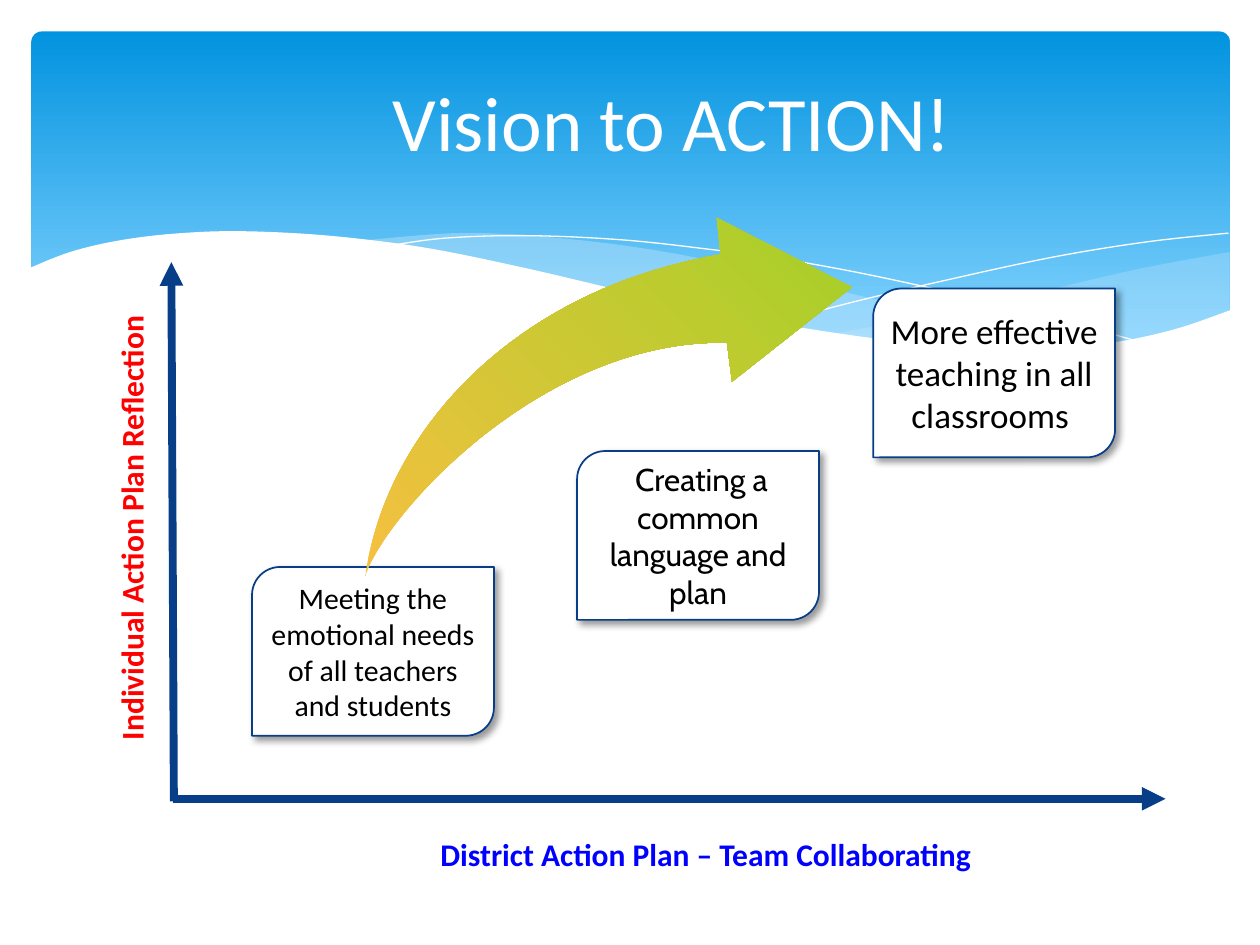
from lxml import etree
from pptx import Presentation
from pptx import util as u
from pptx.dml import color
from pptx.enum import shapes, text
from pptx.oxml import ns

NAVY, WHITE, BLACK, SKY = "073E87", "FFFFFF", "000000", "C6E7FC"


def rgb(code):
    return color.RGBColor.from_string(code)


def add(node, tag, **attrs):
    return etree.SubElement(node, ns.qn(tag), {k: str(v) for k, v in attrs.items()})


def cubic(a, b, c, d, steps=12):
    dots = []
    for i in range(steps + 1):
        t = i / steps
        s = 1 - t
        dots.append(tuple(s**3 * p + 3 * s * s * t * q + 3 * s * t * t * r + t**3 * v
                          for p, q, r, v in zip(a, b, c, d)))
    return dots


def bend(*dots):
    ends = [dots[0], *dots, dots[-1]]
    curve = []
    for a, b, c, d in zip(ends, ends[1:], ends[2:], ends[3:]):
        lead = tuple(q + (r - p) / 6 for p, q, r in zip(a, b, c))
        trail = tuple(r - (v - q) / 6 for q, r, v in zip(b, c, d))
        curve += cubic(b, lead, trail, c, 6)
    return curve


class Deck:
    font = "Calibri"

    def __init__(self):
        self.prs = Presentation()
        self.prs.slide_width, self.prs.slide_height = u.Inches(10), u.Inches(7.5)
        self.slide = self.prs.slides.add_slide(self.prs.slide_layouts[6])
        self.items = self.slide.shapes

    def paint(self, shape, fill=None, line=None, width=0, clear=None):
        shape.shadow.inherit = False
        if fill:
            shape.fill.solid()
            shape.fill.fore_color.rgb = rgb(fill)
        else:
            shape.fill.background()
        if clear:
            tint = shape._element.spPr.find(ns.qn("a:solidFill")).find(ns.qn("a:srgbClr"))
            add(tint, "a:alpha", val=clear * 1000)
        if line:
            shape.line.color.rgb = rgb(line)
            shape.line.width = u.Pt(width)
        else:
            shape.line.fill.background()
        return shape

    def blend(self, shape, first, last, angle, end=1.0):
        shape.fill.gradient()
        shape.fill.gradient_angle = angle
        for stop, tone, spot in zip(shape.fill.gradient_stops, (first, last), (0, end)):
            stop.color.rgb = rgb(tone)
            stop.position = spot

    def block(self, kind, x, y, w, h):
        return self.items.add_shape(kind, *map(u.Inches, (x, y, w, h)))

    def outline(self, dots, closed=True, **style):
        spots = [(u.Inches(x), u.Inches(y)) for x, y in dots]
        form = self.items.build_freeform(*spots[0], scale=1.0)
        form.add_line_segments(spots[1:], close=closed)
        return self.paint(form.convert_to_shape(), **style)

    def fit(self, shape, words, size, tone, bold=False, font=None, middle=True):
        frame = shape.text_frame
        frame.word_wrap = True
        frame.vertical_anchor = text.MSO_ANCHOR.MIDDLE if middle else text.MSO_ANCHOR.TOP
        para = frame.paragraphs[0]
        para.alignment = text.PP_ALIGN.CENTER
        run = para.add_run()
        run.text = words
        run.font.name, run.font.size, run.font.bold = font or self.font, u.Pt(size), bold
        run.font.color.rgb = rgb(tone)

    def label(self, words, x, y, w, h, size, tone, turn=0, **style):
        box = self.items.add_textbox(*map(u.Inches, (x, y, w, h)))
        box.rotation = turn
        self.fit(box, words, size, tone, **style)

    def axis(self, *ends):
        line = self.items.add_connector(shapes.MSO_CONNECTOR.STRAIGHT, *map(u.Inches, ends))
        line.line.color.rgb = rgb(NAVY)
        line.line.width = u.Pt(4.5)
        props = line._element.spPr
        add(props.find(ns.qn("a:ln")), "a:tailEnd", type="triangle")
        add(props, "a:effectLst")

    def card(self, words, x, y, size, font=None):
        card = self.block(shapes.MSO_SHAPE.ROUND_2_DIAG_RECTANGLE, x, y, 1.92, 1.34)
        self.paint(card, WHITE, NAVY, 1)
        glow = add(card._element.spPr.find(ns.qn("a:effectLst")), "a:outerShdw",
                   blurRad=u.Pt(4), dist=u.Pt(3), dir=45 * 60000, algn="tl", rotWithShape=0)
        add(add(glow, "a:srgbClr", val=BLACK), "a:alpha", val=40000)
        frame = card.text_frame
        frame.margin_left = frame.margin_right = u.Inches(0.05)
        frame.margin_top = frame.margin_bottom = u.Inches(0.05)
        self.fit(card, words, size, BLACK, font=font)

    def banner(self):
        panel = self.block(shapes.MSO_SHAPE.ROUNDED_RECTANGLE, 0.25, 0.25, 9.51, 2.7)
        panel.adjustments[0] = 0.03
        self.paint(panel)
        self.blend(panel, "0293E0", "83D3FE", 270, 0.9)
        self.outline(
            bend((9.76, 2), (9.06, 2.13), (8.32, 2.3), (7.53, 2.48), (6.61, 2.65))
            + bend((6.61, 2.65), (7.19, 2.72), (7.69, 2.77), (8.14, 2.78), (8.63, 2.75),
                   (9.13, 2.67), (9.49, 2.57), (9.76, 2.47)),
            fill=SKY, clear=29)
        self.outline(
            bend((8.93, 2.73), (8.07, 2.6), (7.06, 2.4), (6.29, 2.22), (5.55, 2.05),
                 (4.89, 1.94), (4.2, 1.87), (3.61, 1.85), (2.86, 1.91))
            + bend((2.86, 1.91), (3.62, 2.03), (4.49, 2.22), (5.3, 2.4), (6.18, 2.58),
                   (6.95, 2.7), (7.61, 2.77), (8.18, 2.78), (8.93, 2.73)),
            fill=SKY, clear=40)
        self.outline(
            bend((3.09, 1.95), (3.53, 1.89), (4.16, 1.87), (4.89, 1.9), (5.56, 1.97),
                 (6.36, 2.08), (7.27, 2.26), (8.31, 2.51), (9.07, 2.72)),
            closed=False, line=WHITE)
        self.outline(
            bend((6.13, 2.57), (6.72, 2.41), (7.48, 2.23), (8.36, 2.04), (9.1, 1.92),
                 (9.75, 1.85)),
            closed=False, line=WHITE)
        self.outline(
            bend((9.77, 2.46), (9.3, 2.62), (8.75, 2.73), (8.09, 2.77), (7.44, 2.74),
                 (6.68, 2.65), (5.79, 2.5), (5.03, 2.33), (4.18, 2.13), (3.4, 1.97),
                 (2.71, 1.88), (2.11, 1.84), (1.61, 1.84), (1.06, 1.89), (0.59, 1.99),
                 (0.23, 2.13)) + [(0.23, 3.29), (9.77, 3.29)],
            fill=WHITE)

    def arrow(self):
        rise = cubic((2.9, 4.57), (3.05, 3.47), (4.03, 2.31), (5.72, 2.02), 40)
        head = [(5.69, 1.73), (6.76, 2.28), (5.81, 3.03)]
        fall = cubic((5.77, 2.72), (4.32, 2.69), (3.07, 4.06), (2.9, 4.57), 40)
        self.blend(self.outline(rise + head + fall), "F5C040", "A5D028", 45)


def main():
    deck = Deck()
    deck.banner()
    deck.axis(1.37, 6.34, 9.25, 6.34)
    deck.axis(1.38, 6.36, 1.36, 2.08)
    deck.label("District Action Plan – Team Collaborating ", 1.92, 6.58, 7.42, 0.4,
               18, "0000FF", bold=True, middle=False)
    deck.label("Individual Action Plan Reflection", -0.99, 3.99, 4.06, 0.4,
               18, "FF0000", turn=270, bold=True, middle=False)
    deck.card("Meeting the emotional needs of all teachers and students", 2, 4.5, 17)
    deck.card("More effective teaching in all classrooms ", 6.93, 2.29, 20)
    deck.label("Vision to ACTION!", 0.92, 0.33, 8.83, 1.25, 44, WHITE)
    deck.card(" Creating a common language and plan", 4.58, 3.58, 18, "Cabin")
    deck.arrow()
    deck.prs.save("out.pptx")


if __name__ == "__main__":
    main()
